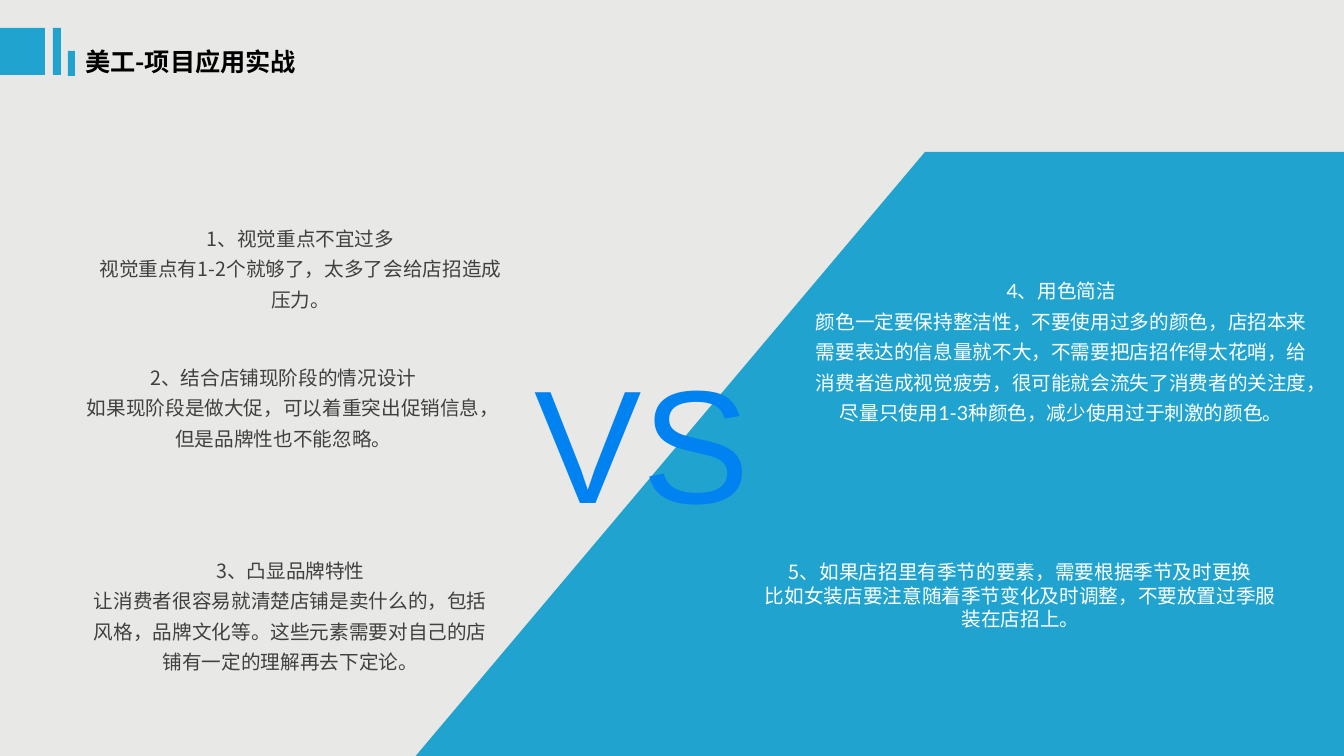
"""Builds the banner design tips slide with a diagonal split and a VS mark."""
from lxml.etree import SubElement
from pptx import Presentation
from pptx.dml.color import RGBColor
from pptx.enum.shapes import MSO_SHAPE as Shape
from pptx.enum.text import MSO_ANCHOR as Anchor, PP_ALIGN as Align
from pptx.oxml.ns import qn
from pptx.util import Pt

PX = 9144000 / 1008
BLUE = RGBColor(0x21, 0xA3, 0xD0)
BRIGHT = RGBColor(0x00, 0x82, 0xF0)
PAPER = RGBColor(0xE8, 0xE8, 0xE6)
GREY = RGBColor(0x40, 0x40, 0x40)
WHITE = RGBColor(0xFF, 0xFF, 0xFF)
BLACK = RGBColor(0, 0, 0)
NOTO = "Noto Sans CJK SC"

HEADING = "美工-项目应用实战"
HEADING_BOX = (75, 41, 273, 40)
VERSUS = "VS"
VERSUS_BOX = (525, 338, 241, 206)
PANEL = [(925, 152), (1346, 152), (1346, 756), (414, 758)]
BARS = [(0, 28, 45, 47), (53, 28, 8, 47), (68, 51, 7, 25)]
TIPS = [
    ((85, 212, 431, 107), GREY, NOTO,
     ["1、视觉重点不宜过多",
      "视觉重点有1-2个就够了，太多了会给店招造成压力。"]),
    ((68, 351, 431, 107), GREY, NOTO,
     ["2、结合店铺现阶段的情况设计",
      "如果现阶段是做大促，可以着重突出促销信息，但是品牌性也不能忽略。"]),
    ((75, 543, 431, 139), GREY, NOTO,
     ["3、凸显品牌特性",
      "让消费者很容易就清楚店铺是卖什么的，包括风格，品牌文化等。"
      "这些元素需要对自己的店铺有一定的理解再去下定论。"]),
    ((801, 263, 521, 171), WHITE, "Lato",
     ["4、用色简洁",
      "颜色一定要保持整洁性，不要使用过多的颜色，店招本来需要表达的信息量就不大，"
      "不需要把店招作得太花哨，给消费者造成视觉疲劳，很可能就会流失了消费者的关注度，"
      "尽量只使用1-3种颜色，减少使用过于刺激的颜色。"]),
]
SEASON_BOX = (748, 555, 545, 82)
SEASON = ["5、如果店招里有季节的要素，需要根据季节及时更换",
          "比如女装店要注意随着季节变化及时调整，不要放置过季服装在店招上。"]


def emu(box):
    return [round(length * PX) for length in box]


def write(holder, lines, size, color, font, align, spacing=1.0,
          anchor=Anchor.TOP, bold=False):
    frame = holder.text_frame
    frame.text = "\n".join(lines)
    frame.word_wrap = True
    frame.vertical_anchor = anchor
    for paragraph in frame.paragraphs:
        paragraph.alignment = align
        paragraph.line_spacing = spacing
        paragraph.space_before = Pt(0)
        for run in paragraph.runs:
            run.font.size = Pt(size)
            run.font.bold = bold
            run.font.color.rgb = color
            run.font.name = font
            east_asian = SubElement(run.font._element, qn("a:ea"))
            east_asian.set("typeface", NOTO)


def paint(part):
    part.shadow.inherit = False
    part.fill.solid()
    part.fill.fore_color.rgb = BLUE
    part.line.fill.background()


def main():
    deck = Presentation()
    deck.slide_width, deck.slide_height = emu((1344, 756))
    slide = deck.slides.add_slide(deck.slide_layouts[5])
    slide.background.fill.solid()
    slide.background.fill.fore_color.rgb = PAPER
    shapes = slide.shapes

    outline = shapes.build_freeform(*PANEL[0], scale=PX)
    outline.add_line_segments(PANEL[1:], close=True)
    paint(outline.convert_to_shape())

    for box, color, font, lines in TIPS:
        tip = shapes.add_shape(Shape.ROUNDED_RECTANGLE, *emu(box))
        tip.adjustments[0] = 0.07
        tip.shadow.inherit = False
        tip.fill.background()
        tip.line.fill.background()
        write(tip, lines, 14, color, font, Align.CENTER, 1.3, Anchor.MIDDLE)

    versus = shapes.add_textbox(*emu(VERSUS_BOX))
    write(versus, [VERSUS], 115, BRIGHT, "Arial", Align.LEFT)

    for box in BARS:
        paint(shapes.add_shape(Shape.RECTANGLE, *emu(box)))

    heading = shapes.title
    heading.left, heading.top, heading.width, heading.height = emu(HEADING_BOX)
    write(heading, [HEADING], 18, BLACK, NOTO, Align.LEFT, bold=True)

    season = shapes.add_textbox(*emu(SEASON_BOX))
    write(season, SEASON, 14, WHITE, NOTO, Align.CENTER)

    deck.save("out.pptx")


if __name__ == "__main__":
    main()
